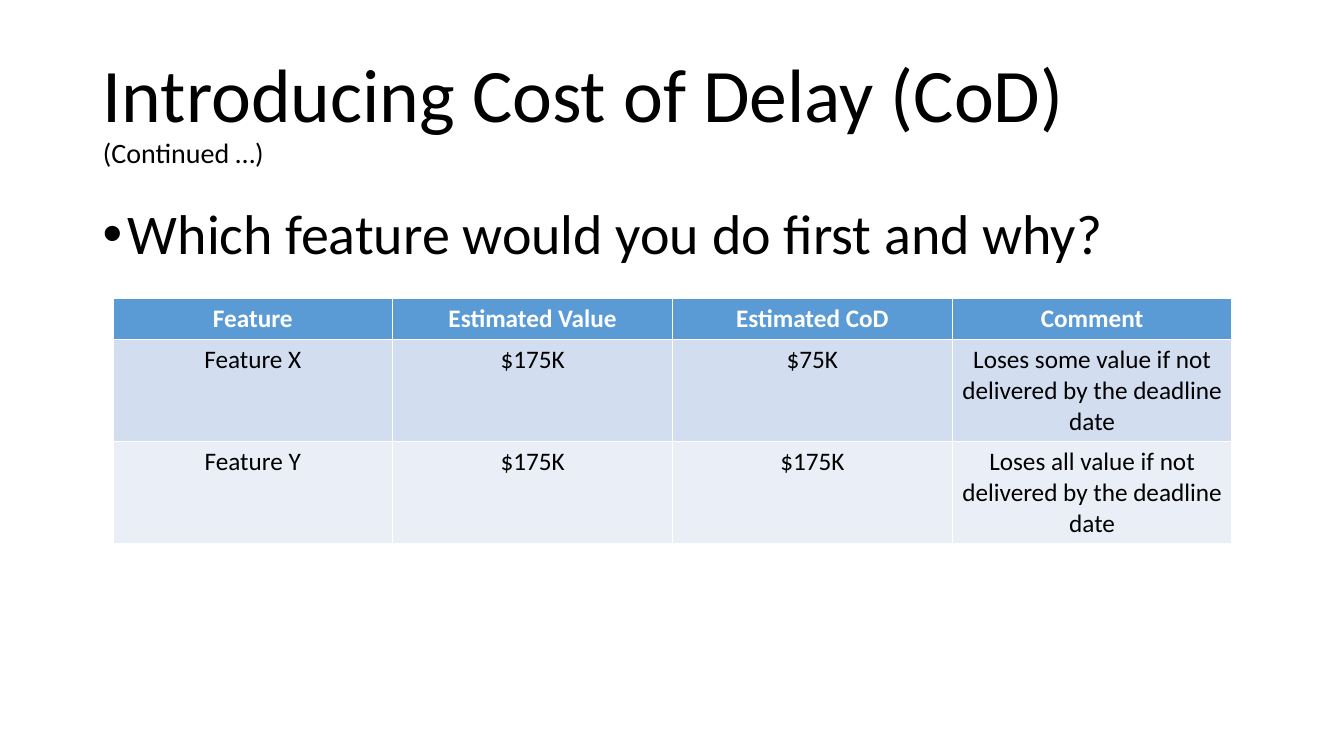
import pptx
import pptx.dml.color
import pptx.enum.text
import pptx.util
from lxml import etree

Inches = pptx.util.Inches
Pt = pptx.util.Pt
PP_ALIGN = pptx.enum.text.PP_ALIGN
ANCHOR = pptx.enum.text.MSO_ANCHOR

COLORS = {"text": "000000", "header text": "FFFFFF", "header": "5B9BD5",
          "odd row": "D2DEEF", "even row": "EAEFF7"}
ROWS = [
    ("Feature", "Estimated Value", "Estimated CoD", "Comment"),
    ("Feature X", "$175K", "$75K",
     "Loses some value if not delivered by the deadline date"),
    ("Feature Y", "$175K", "$175K",
     "Loses all value if not delivered by the deadline date"),
]
ROW_FILLS = ["header", "odd row", "even row"]
ROW_HEIGHTS = [0.41, 1.01, 1.01]


def style(font, size, color="text", bold=False):
    font.name = "Calibri"
    font.size = Pt(size)
    font.bold = bold
    font.color.rgb = pptx.dml.color.RGBColor.from_string(COLORS[color])


deck = pptx.Presentation()
deck.slide_width = Inches(13.33)
deck.slide_height = Inches(7.5)
slide = deck.slides.add_slide(deck.slide_layouts[5])

# Title with a small second line
title = slide.shapes.title
title.left, title.top = Inches(0.92), Inches(0.4)
title.width, title.height = Inches(11.5), Inches(1.45)
title.text_frame.vertical_anchor = ANCHOR.MIDDLE
title.text_frame.auto_size = pptx.enum.text.MSO_AUTO_SIZE.NONE
heading = title.text_frame.paragraphs[0]
heading.text = "Introducing Cost of Delay (CoD)\v(Continued …)"
heading.alignment = PP_ALIGN.LEFT
heading.line_spacing = 0.9
for run, size in zip(heading.runs, (54, 20)):
    style(run.font, size)

# Bulleted question
question_box = slide.shapes.add_textbox(
    Inches(0.92), Inches(2), Inches(11.5), Inches(0.8))
question_box.text_frame.word_wrap = True
question = question_box.text_frame.paragraphs[0]
question.text = "Which feature would you do first and why?"
question.line_spacing = 0.9
bullet_format = question._p.get_or_add_pPr()
bullet_format.set("marL", str(Inches(0.25)))
bullet_format.set("indent", str(-Inches(0.25)))
namespace = pptx.oxml.ns.nsuri("a")
etree.SubElement(bullet_format, f"{{{namespace}}}buFont", typeface="Arial")
etree.SubElement(bullet_format, f"{{{namespace}}}buChar", char="•")
style(question.runs[0].font, 40)

# Feature comparison; the table style supplies the white borders
features = slide.shapes.add_table(
    len(ROWS), len(ROWS[0]), Inches(1.12), Inches(2.96),
    Inches(11.1), Inches(sum(ROW_HEIGHTS))).table
for row, (texts, fill, height) in enumerate(zip(ROWS, ROW_FILLS, ROW_HEIGHTS)):
    features.rows[row].height = Inches(height)
    is_header = fill == "header"
    for column, text in enumerate(texts):
        cell = features.cell(row, column)
        cell.fill.solid()
        cell.fill.fore_color.rgb = pptx.dml.color.RGBColor.from_string(COLORS[fill])
        entry = cell.text_frame.paragraphs[0]
        entry.text = text
        entry.alignment = PP_ALIGN.CENTER
        style(entry.runs[0].font, 18, "header text" if is_header else "text", is_header)

deck.save("out.pptx")
